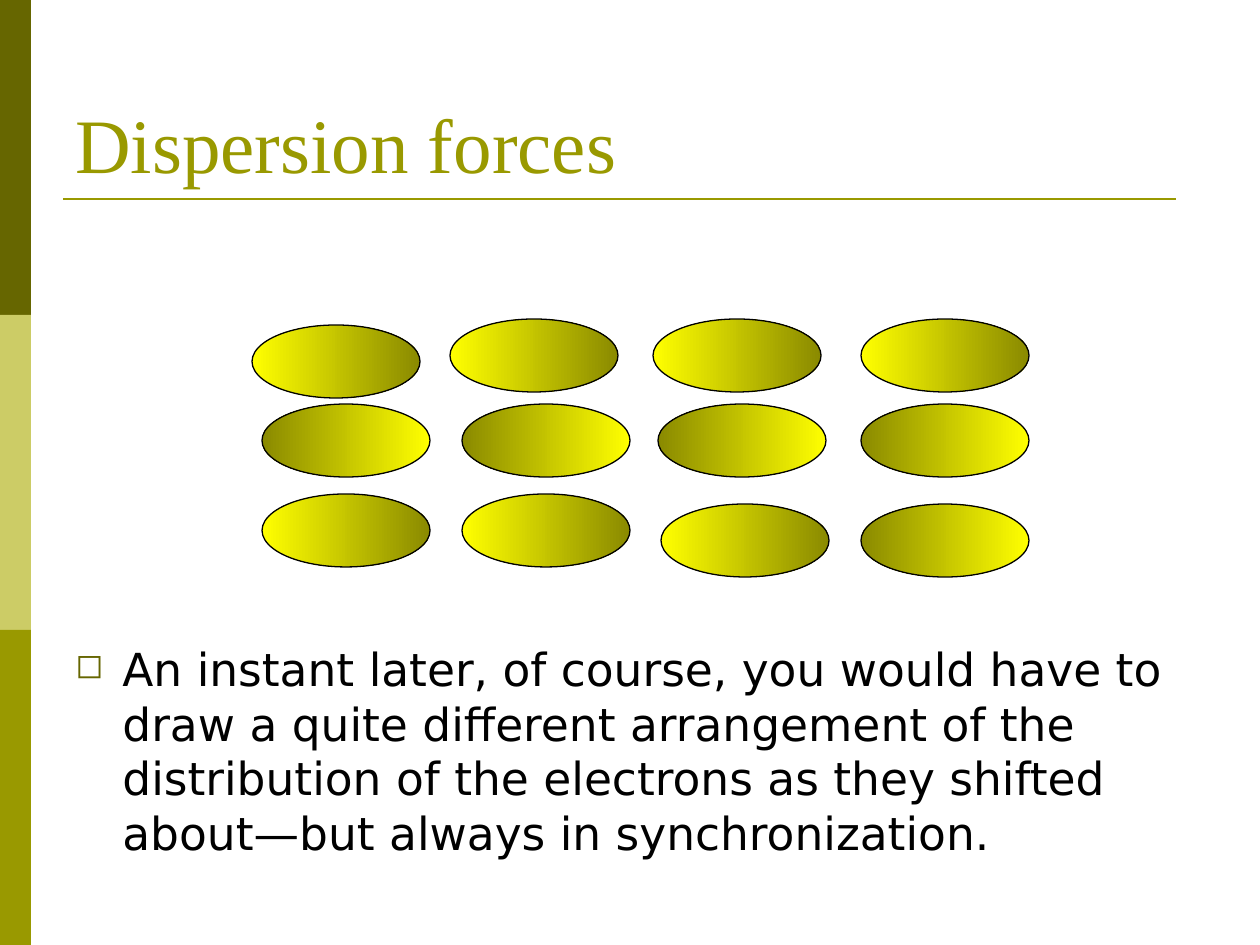
from dataclasses import dataclass

from lxml import etree
from pptx import Presentation
from pptx import util as u
from pptx.dml import color
from pptx.enum import shapes, text
from pptx.oxml import ns

EMU_PER_PX = 914400 / 126
COLORS = {
    "olive": "999900",
    "dark": "666600",
    "pale": "CCCC66",
    "yellow": "FFFF00",
    "shade": "8A8A00",
    "black": "000000",
}


@dataclass
class Band:
    top: int
    fill: str


@dataclass
class Molecule:
    left: int
    top: int
    turn: int = 0


@dataclass
class Caption:
    wording: str
    box: tuple[int, int, int, int]
    font: dict
    fill: str
    frame: dict
    paragraph: dict


BANDS = [Band(0, "dark"), Band(315, "pale"), Band(630, "olive")]
MOLECULES = [
    Molecule(252, 325),
    *(Molecule(left, 319) for left in (450, 653, 861)),
    *(Molecule(left, 404, 180) for left in (262, 462, 658, 861)),
    *(Molecule(left, 494) for left in (262, 462)),
    Molecule(661, 504),
    Molecule(861, 504, 180),
]
HEADING = Caption(
    "Dispersion forces",
    (63, 38, 1134, 157),
    {"name": "Times New Roman", "size": u.Pt(44)},
    "olive",
    {"word_wrap": True, "vertical_anchor": text.MSO_ANCHOR.BOTTOM},
    {},
)
EXPLANATION = Caption(
    "An instant later, of course, you would have to draw a quite different "
    "arrangement of the distribution of the electrons as they shifted "
    "about—but always in synchronization.",
    (63, 635, 1176, 278),
    {"name": "DejaVu Sans", "size": u.Pt(26)},
    "black",
    {"word_wrap": True, "vertical_anchor": text.MSO_ANCHOR.TOP},
    {"line_spacing": u.Pt(31.2)},
)


def px(length: int) -> u.Emu:
    return u.Emu(round(length * EMU_PER_PX))


def rgb(name: str) -> color.RGBColor:
    return color.RGBColor.from_string(COLORS[name])


def apply(target, formats: dict) -> None:
    for attribute, value in formats.items():
        setattr(target, attribute, value)


def draw_band(slide, band: Band) -> None:
    stripe = slide.shapes.add_shape(
        shapes.MSO_SHAPE.RECTANGLE, px(0), px(band.top), px(31), px(315)
    )
    stripe.shadow.inherit = False
    stripe.fill.solid()
    stripe.fill.fore_color.rgb = rgb(band.fill)
    stripe.line.fill.background()


def draw_rule(slide) -> None:
    rule = slide.shapes.add_connector(
        shapes.MSO_CONNECTOR.STRAIGHT, px(63), px(199), px(1176), px(199)
    )
    rule.line.color.rgb = rgb("olive")
    rule.line.width = u.Pt(1.5)
    etree.SubElement(rule._element.spPr, ns.qn("a:effectLst"))


def draw_molecule(slide, molecule: Molecule) -> None:
    cloud = slide.shapes.add_shape(
        shapes.MSO_SHAPE.OVAL, px(molecule.left), px(molecule.top), px(168), px(73)
    )
    cloud.shadow.inherit = False
    cloud.rotation = molecule.turn
    cloud.fill.gradient()
    cloud.fill.gradient_angle = 0
    for stop, name in zip(cloud.fill.gradient_stops, ("yellow", "shade")):
        stop.color.rgb = rgb(name)
    cloud.line.color.rgb = rgb("black")
    cloud.line.width = u.Pt(0.75)


def draw_caption(slide, caption: Caption):
    frame = slide.shapes.add_textbox(*map(px, caption.box)).text_frame
    apply(frame, caption.frame)
    paragraph = frame.paragraphs[0]
    apply(paragraph, caption.paragraph)
    run = paragraph.add_run()
    run.text = caption.wording
    apply(run.font, caption.font)
    run.font.color.rgb = rgb(caption.fill)
    return paragraph


def add_bullet(paragraph) -> None:
    properties = paragraph._p.get_or_add_pPr()
    apply_indent = {"marL": px(47), "indent": -px(47)}
    for attribute, value in apply_indent.items():
        properties.set(attribute, str(value))
    tint = etree.SubElement(properties, ns.qn("a:buClr"))
    etree.SubElement(tint, ns.qn("a:srgbClr"), val=COLORS["dark"])
    etree.SubElement(properties, ns.qn("a:buSzPct"), val="75000")
    etree.SubElement(properties, ns.qn("a:buChar"), char="◻")


def main() -> None:
    deck = Presentation()
    apply(deck, {"slide_width": px(1260), "slide_height": px(945)})
    slide = deck.slides.add_slide(deck.slide_layouts[6])
    for band in BANDS:
        draw_band(slide, band)
    draw_rule(slide)
    draw_caption(slide, HEADING)
    add_bullet(draw_caption(slide, EXPLANATION))
    for molecule in MOLECULES:
        draw_molecule(slide, molecule)
    deck.save("out.pptx")


if __name__ == "__main__":
    main()
